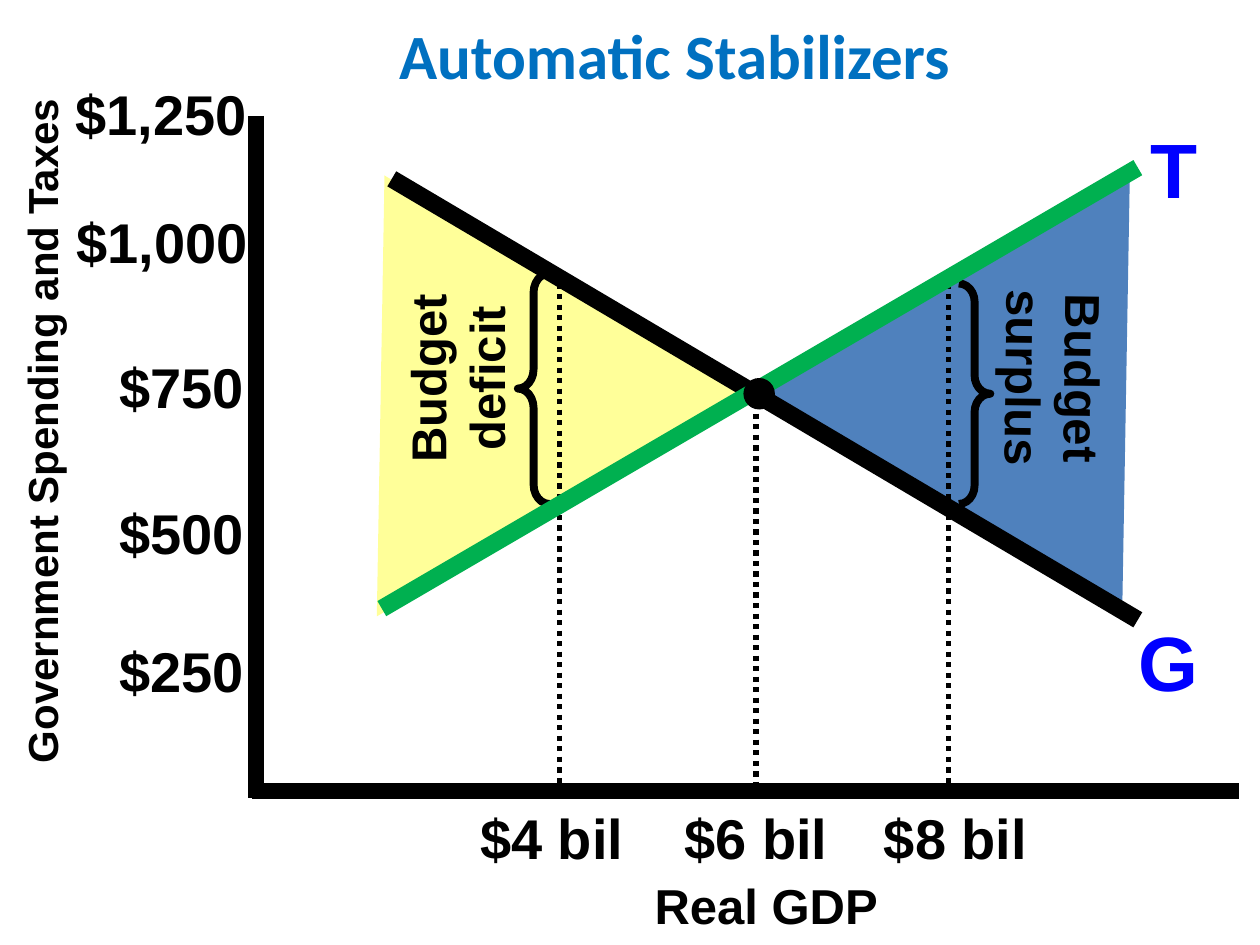
from dataclasses import dataclass
from typing import Optional

from lxml.etree import SubElement
from pptx import Presentation
from pptx.dml.color import RGBColor
from pptx.enum.dml import MSO_LINE
from pptx.enum.shapes import MSO_CONNECTOR, MSO_SHAPE
from pptx.enum.text import MSO_ANCHOR, MSO_AUTO_SIZE, PP_ALIGN
from pptx.oxml.ns import qn
from pptx.shapes.autoshape import Shape
from pptx.slide import Slide
from pptx.util import Pt


@dataclass(frozen=True)
class Theme:
    black: str = "000000"
    white: str = "FFFFFF"
    title: str = "0070C0"
    curve_name: str = "0000FF"
    taxes: str = "00B050"
    deficit: str = "FFFF99"
    surplus: str = "4F81BD"
    font: str = "Arial"
    title_font: str = "Calibri"
    title_size: float = 36
    curve_size: float = 44
    tick_size: float = 32
    label_size: float = 28
    axis_size: float = 24


THEME = Theme()


@dataclass(frozen=True)
class Box:
    left: float
    top: float
    width: float
    height: float


@dataclass(frozen=True)
class Label:
    text: str
    box: Box
    size: float = THEME.tick_size
    color: str = THEME.black
    font: str = THEME.font
    centered: bool = False
    rotation: float = 0
    fill: Optional[str] = None


@dataclass(frozen=True)
class Segment:
    start: tuple[float, float]
    end: tuple[float, float]
    width: float
    color: str = THEME.black
    dotted: bool = False


@dataclass(frozen=True)
class Figure:
    kind: MSO_SHAPE
    box: Box
    fill: Optional[str] = None
    line_width: float = 0
    rotation: float = 0
    adjustment: Optional[float] = None


TICK_HEIGHT = 41.8
TICK_TOP = 455.8
AXIS_Y = 452.2

WEDGES = [
    Figure(MSO_SHAPE.ISOSCELES_TRIANGLE, Box(412.5, 117.4, 252, 210),
           THEME.surplus, rotation=271, adjustment=0.482),
    Figure(MSO_SHAPE.ISOSCELES_TRIANGLE, Box(196.5, 123.1, 252, 210),
           THEME.deficit, rotation=91, adjustment=0.482),
]
GUIDES = [
    Segment((x, top), (x, AXIS_Y), 3, dotted=True)
    for x, top in [(319.7, 162), (432, 230.4), (542.2, 162)]
]
BRACES = [
    Figure(MSO_SHAPE.LEFT_BRACE, Box(295.9, 156.2, 18, 131.8),
           line_width=4.5, adjustment=0.611),
    Figure(MSO_SHAPE.RIGHT_BRACE, Box(547.9, 162, 18, 126),
           line_width=4.5, adjustment=0.583),
]
CURVES = [
    Segment((223.9, 102.2), (650.2, 354.2), 10),
    Segment((650.2, 95.8), (218.2, 347.8), 10, THEME.taxes),
]
AXES = [
    Segment((146.2, 66.2), (146.2, 455.8), 9),
    Segment((144, AXIS_Y), (707.8, AXIS_Y), 9),
]
EQUILIBRIUM = Figure(MSO_SHAPE.OVAL, Box(424.8, 216, 18, 18), THEME.black)

SPENDING_TICKS = [
    Label(text, Box(left, top, width, TICK_HEIGHT))
    for text, left, top, width in [
        ("$1,250", 36, 41.8, 131.8),
        ("$1,000", 36.7, 115.2, 133.2),
        ("$750", 61.2, 198, 105.1),
        ("$500", 61.2, 281.5, 98.6),
        ("$250", 61.2, 360, 96.5),
    ]
]
GDP_TICKS = [
    Label(text, Box(left, TICK_TOP, width, TICK_HEIGHT), centered=True)
    for text, left, width in [
        ("$4 bil", 246.2, 138.2),
        ("$6 bil", 367.9, 128.2),
        ("$8 bil", 486, 120.2),
    ]
]
CURVE_NAMES = [
    Label(text, Box(left, top, 48.2, 54.7), THEME.curve_size, THEME.curve_name)
    for text, left, top in [("T", 650.2, 66.2), ("G", 643.7, 347.8)]
]
GAP_NAMES = [
    Label(text, Box(left, 182.2, 131.8, 67.7), THEME.label_size,
          centered=True, rotation=rotation)
    for text, left, rotation in [
        ("Budget deficit", 191.5, 270),
        ("Budget surplus", 540, 90.7),
    ]
]
HEADINGS = [
    Label("Automatic Stabilizers", Box(174.2, 5.8, 422.6, 51.1),
          THEME.title_size, THEME.title, THEME.title_font, centered=True,
          fill=THEME.white),
    Label("Real GDP", Box(365.8, 496.8, 144, 37.4), THEME.label_size,
          centered=True),
    Label("Government Spending and Taxes", Box(-175.7, 229.7, 396, 33.1),
          THEME.axis_size, centered=True, rotation=270),
]


def color_of(value: str) -> RGBColor:
    return RGBColor.from_string(value)


def points(box: Box) -> tuple[Pt, Pt, Pt, Pt]:
    return Pt(box.left), Pt(box.top), Pt(box.width), Pt(box.height)


def paint(shape: Shape, fill: Optional[str]) -> None:
    if fill:
        shape.fill.solid()
        shape.fill.fore_color.rgb = color_of(fill)
    else:
        shape.fill.background()


def add_label(slide: Slide, label: Label) -> None:
    shape = slide.shapes.add_textbox(*points(label.box))
    shape.rotation = label.rotation
    paint(shape, label.fill)
    frame = shape.text_frame
    frame.word_wrap = True
    frame.auto_size = MSO_AUTO_SIZE.SHAPE_TO_FIT_TEXT
    frame.vertical_anchor = MSO_ANCHOR.TOP
    paragraph = frame.paragraphs[0]
    paragraph.alignment = PP_ALIGN.CENTER if label.centered else PP_ALIGN.LEFT
    properties = paragraph._p.get_or_add_pPr()
    spacing = SubElement(properties, qn("a:spcBef"))
    SubElement(spacing, qn("a:spcPct")).set("val", "50000")
    run = paragraph.add_run()
    run.text = label.text
    run.font.name = label.font
    run.font.size = Pt(label.size)
    run.font.bold = True
    run.font.color.rgb = color_of(label.color)


def add_segment(slide: Slide, segment: Segment) -> None:
    connector = slide.shapes.add_connector(
        MSO_CONNECTOR.STRAIGHT,
        *(Pt(value) for value in segment.start + segment.end))
    connector.line.width = Pt(segment.width)
    connector.line.color.rgb = color_of(segment.color)
    if segment.dotted:
        connector.line.dash_style = MSO_LINE.ROUND_DOT
    SubElement(connector._element.spPr, qn("a:effectLst"))


def add_figure(slide: Slide, figure: Figure) -> None:
    shape = slide.shapes.add_shape(figure.kind, *points(figure.box))
    shape.shadow.inherit = False
    shape.rotation = figure.rotation
    if figure.adjustment is not None:
        shape.adjustments[0] = figure.adjustment
    paint(shape, figure.fill)
    if figure.line_width:
        shape.line.width = Pt(figure.line_width)
        shape.line.color.rgb = color_of(THEME.black)
    else:
        shape.line.fill.background()


def main() -> None:
    presentation = Presentation()
    presentation.slide_width, presentation.slide_height = Pt(720), Pt(540)
    slide = presentation.slides.add_slide(presentation.slide_layouts[6])
    for figure in WEDGES:
        add_figure(slide, figure)
    for segment in GUIDES:
        add_segment(slide, segment)
    for figure in BRACES:
        add_figure(slide, figure)
    for segment in CURVES + AXES:
        add_segment(slide, segment)
    add_figure(slide, EQUILIBRIUM)
    for label in SPENDING_TICKS + GDP_TICKS + CURVE_NAMES + GAP_NAMES + HEADINGS:
        add_label(slide, label)
    presentation.save("out.pptx")


if __name__ == "__main__":
    main()
